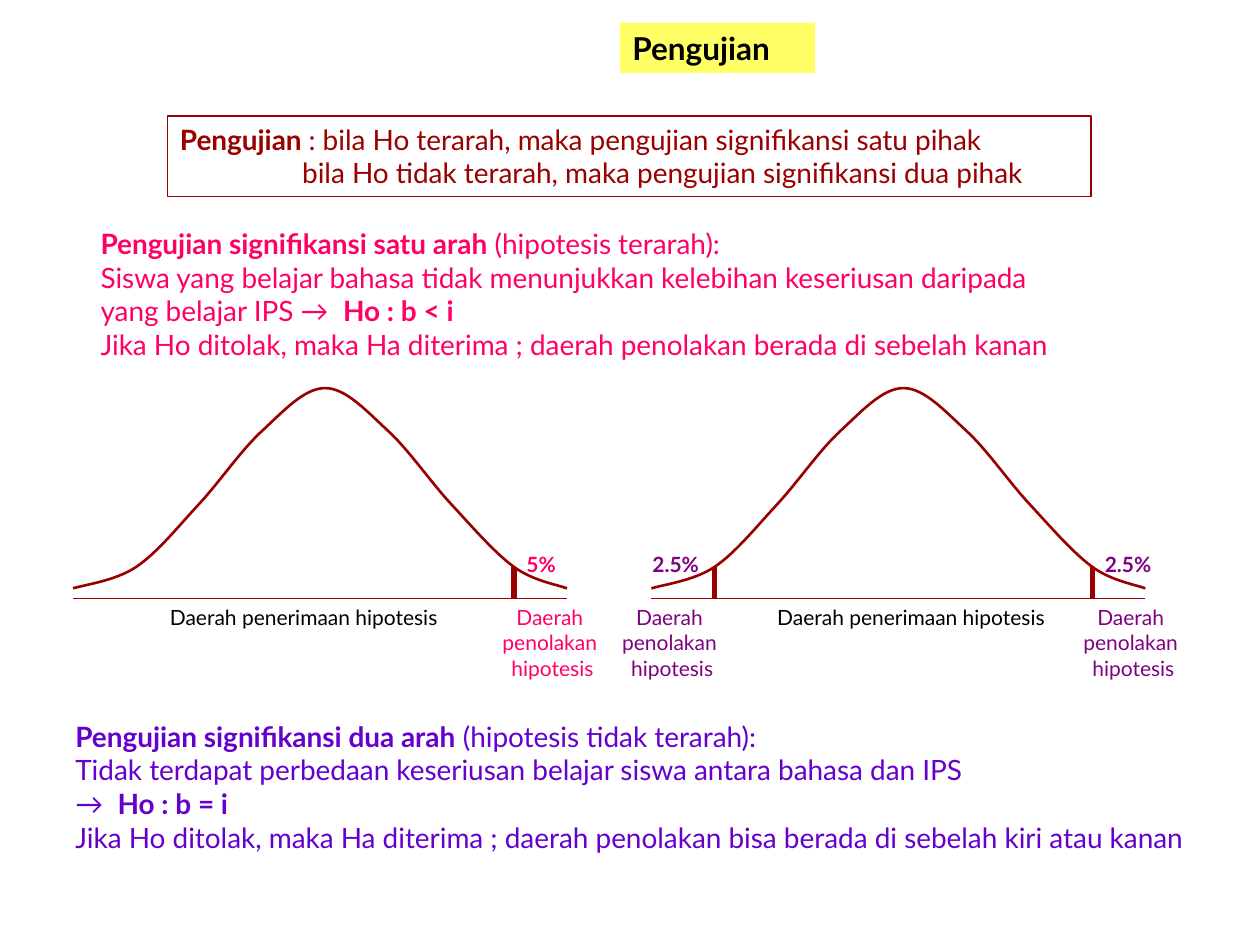
import pptx
import pptx.util
import pptx.dml.color
import pptx.enum.shapes
import pptx.enum.text
import pptx.oxml.ns
import lxml.etree

Inches = pptx.util.Inches
Pt = pptx.util.Pt
RGBColor = pptx.dml.color.RGBColor
qn = pptx.oxml.ns.qn
ALIGN = pptx.enum.text.PP_ALIGN
RECTANGLE = pptx.enum.shapes.MSO_SHAPE.RECTANGLE
STRAIGHT = pptx.enum.shapes.MSO_CONNECTOR.STRAIGHT

MAROON = RGBColor(0x99, 0x00, 0x00)
PINK = RGBColor(0xFF, 0x00, 0x66)
VIOLET = RGBColor(0x66, 0x00, 0xCC)
PURPLE = RGBColor(0x80, 0x00, 0x80)
BLACK = RGBColor(0x00, 0x00, 0x00)
YELLOW = RGBColor(0xFF, 0xFF, 0x66)

TITLE = [[("Pengujian", True)]]
RULE = [
    [("Pengujian ", True), (": bila Ho terarah, maka pengujian signifikansi satu pihak", False)],
    [("bila Ho tidak terarah, maka pengujian signifikansi dua pihak", False)],
]
ONE_SIDED = [
    [("Pengujian signifikansi satu arah", True), (" (hipotesis terarah):", False)],
    [("Siswa yang belajar bahasa tidak menunjukkan kelebihan keseriusan daripada", False)],
    [("yang belajar IPS →  ", False), ("Ho : b < i", True)],
    [("Jika Ho ditolak, maka Ha diterima ; daerah penolakan berada di sebelah kanan", False)],
]
TWO_SIDED = [
    [("Pengujian signifikansi dua arah", True), (" (hipotesis tidak terarah):", False)],
    [("Tidak terdapat perbedaan keseriusan belajar siswa antara bahasa dan IPS", False)],
    [("→  ", False), ("Ho : b = i", True)],
    [("Jika Ho ditolak, maka Ha diterima ; daerah penolakan bisa berada di sebelah kiri atau kanan", False)],
]
ACCEPTANCE = [[("Daerah penerimaan hipotesis", False)]]
REJECTION = [[("Daerah ", False)], [("penolakan ", False)], [("hipotesis", False)]]

BASELINE, CUT_TOP, PERCENT_TOP = 4.75, 4.5, 4.33
CURVE_WIDTH = 3.92
KNOTS = [(0, 4.67), (0.5, 4.5), (1, 4), (1.5, 3.42), (2, 3.08),
         (2.5, 3.42), (3, 4), (3.5, 4.5), (CURVE_WIDTH, 4.67)]

DIAGRAMS = [
    {"left": 0.58, "acceptance": 1.25, "color": PINK,
     "tails": [{"cut": 4.08, "label": 3.88, "percent": "5%", "at": 4.08, "width": 0.51}]},
    {"left": 5.17, "acceptance": 6.07, "color": PURPLE,
     "tails": [{"cut": 5.67, "label": 4.83, "percent": "2.5%", "at": 5.08, "width": 0.66},
               {"cut": 8.67, "label": 8.49, "percent": "2.5%", "at": 8.67, "width": 0.66}]},
]

presentation = pptx.Presentation()
presentation.slide_width = Inches(10)
presentation.slide_height = Inches(7.5)
slide = presentation.slides.add_slide(presentation.slide_layouts[6])


def write(shape, lines, size, color, align=ALIGN.LEFT, wrap=False):
    frame = shape.text_frame
    frame.word_wrap = wrap
    frame.vertical_anchor = pptx.enum.text.MSO_ANCHOR.TOP
    for index, line in enumerate(lines):
        paragraph = frame.paragraphs[0] if index == 0 else frame.add_paragraph()
        paragraph.alignment = align
        paragraph.font.size = Pt(size)
        paragraph.font.name = "Lato"
        paragraph.font.color.rgb = color
        for text, bold in line:
            run = paragraph.add_run()
            run.text = text
            run.font.bold = bold


def add_text(left, top, width, height, lines, size, color, align=ALIGN.LEFT):
    box = slide.shapes.add_textbox(Inches(left), Inches(top), Inches(width), Inches(height))
    write(box, lines, size, color, align)


def add_box(left, top, width, height, lines, size, color):
    box = slide.shapes.add_shape(RECTANGLE, Inches(left), Inches(top), Inches(width), Inches(height))
    box.shadow.inherit = False
    box.fill.background()
    box.line.fill.background()
    write(box, lines, size, color, wrap=True)
    return box


def add_line(x1, y1, x2, y2, width):
    line = slide.shapes.add_connector(STRAIGHT, Inches(x1), Inches(y1), Inches(x2), Inches(y2))
    line.line.color.rgb = MAROON
    line.line.width = Pt(width)
    lxml.etree.SubElement(line._element.spPr, qn("a:effectLst"))


def smooth_outline(shape):
    points = [(int(point.get("x")), int(point.get("y"))) for point in shape._element.iter(qn("a:pt"))]
    padded = [points[0], *points, points[-1]]
    segments = list(shape._element.iter(qn("a:lnTo")))
    for segment, before, start, end, after in zip(segments, padded, padded[1:], padded[2:], padded[3:]):
        control1 = [s + (e - b) / 6 for b, s, e in zip(before, start, end)]
        control2 = [e - (a - s) / 6 for s, e, a in zip(start, end, after)]
        bezier = lxml.etree.Element(qn("a:cubicBezTo"))
        for x, y in (control1, control2, end):
            lxml.etree.SubElement(bezier, qn("a:pt"), x=str(round(x)), y=str(round(y)))
        segment.getparent().replace(segment, bezier)


def add_curve(left):
    points = [(Inches(left + x), Inches(y)) for x, y in KNOTS]
    builder = slide.shapes.build_freeform(*points[0])
    builder.add_line_segments(points[1:], close=False)
    curve = builder.convert_to_shape()
    smooth_outline(curve)
    curve.shadow.inherit = False
    curve.fill.background()
    curve.line.color.rgb = MAROON
    curve.line.width = Pt(1.5)


rule_box = add_box(1.33, 0.92, 7.33, 0.64, RULE, 16, MAROON)
rule_box.line.color.rgb = MAROON
rule_box.line.width = Pt(0.75)
rule_box.text_frame.paragraphs[1]._p.get_or_add_pPr().set("marL", str(Inches(0.97)))

title_box = add_box(4.92, 0.18, 1.55, 0.4, TITLE, 18, BLACK)
title_box.fill.solid()
title_box.fill.fore_color.rgb = YELLOW

add_text(0.7, 1.75, 7.93, 1.17, ONE_SIDED, 16, PINK)
add_text(0.5, 5.66, 9.24, 1.17, TWO_SIDED, 16, VIOLET)

for diagram in DIAGRAMS:
    left, color = diagram["left"], diagram["color"]
    add_curve(left)
    add_line(left, BASELINE, left + CURVE_WIDTH, BASELINE, 1)
    add_text(diagram["acceptance"], BASELINE, 2.35, 0.3, ACCEPTANCE, 12, BLACK)
    for tail in diagram["tails"]:
        add_line(tail["cut"], BASELINE, tail["cut"], CUT_TOP, 3)
        add_text(tail["label"], BASELINE, 1.01, 0.7, REJECTION, 12, color, ALIGN.CENTER)
        add_text(tail["at"], PERCENT_TOP, tail["width"], 0.3, [[(tail["percent"], True)]], 12, color)

presentation.save("out.pptx")
